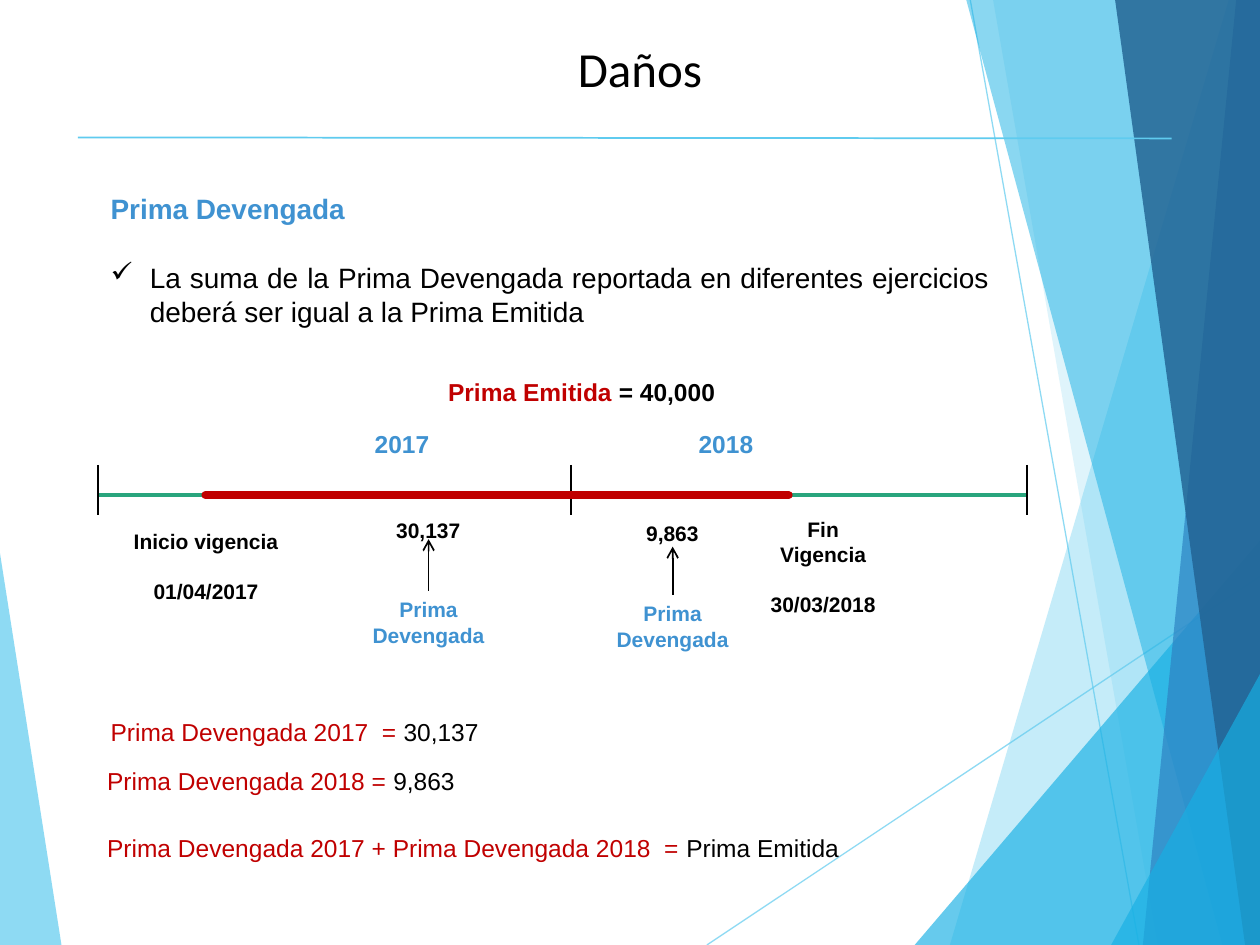
import pptx
import pptx.util
import pptx.dml.color
import pptx.enum.shapes
import pptx.enum.text
import pptx.oxml
import lxml.etree
from pptx.util import Cm, Pt

COLORS = {
    "sky": "5FCBEF", "cyan": "17B0E4", "mid": "2E83C3", "deep": "226292",
    "blue": "3F92D1", "red": "C00000", "green": "29A57D", "black": "000000",
}
ALIGN = pptx.enum.text.PP_ALIGN
W, H = 25.4, 19.05

prs = pptx.Presentation()
prs.slide_width, prs.slide_height = Cm(W), Cm(H)
s = prs.slides.add_slide(prs.slide_layouts[5])
rgb = {k: pptx.dml.color.RGBColor.from_string(v) for k, v in COLORS.items()}
qn = pptx.oxml.ns.qn


def line(x1, y1, x2, y2, color, width, alpha=100):
    """Draw a straight line without shadow; alpha is opacity in percent."""
    c = s.shapes.add_connector(pptx.enum.shapes.MSO_CONNECTOR.STRAIGHT,
                               Cm(x1), Cm(y1), Cm(x2), Cm(y2))
    c.line.color.rgb = rgb[color]
    c.line.width = Pt(width)
    sp_pr = c._element.spPr
    if alpha < 100:
        clr = sp_pr.find(".//" + qn("a:srgbClr"))
        lxml.etree.SubElement(clr, qn("a:alpha"), val=str(alpha * 1000))
    lxml.etree.SubElement(sp_pr, qn("a:effectLst"))
    return c


def text(x, y, w, h, paragraphs, size, bold=False, align=ALIGN.CENTER):
    """Add a text box; each paragraph is a list of (text, color) runs."""
    tf = s.shapes.add_textbox(Cm(x), Cm(y), Cm(w), Cm(h)).text_frame
    tf.word_wrap = True
    for i, runs in enumerate(paragraphs):
        p = tf.add_paragraph() if i else tf.paragraphs[0]
        p.alignment = align
        p.font.name, p.font.size, p.font.bold = "Arial", Pt(size), bold
        for content, color in runs:
            r = p.add_run()
            r.text = content
            r.font.color.rgb = rgb[color]
    return tf


# Background facets
def_right = [(W, H), (W, 0)]
facets = [
    ([(0, 11.15), (1.24, H), (0, H)], "sky", 70),
    ([(24.77, 0), (19.15, H)] + def_right, "sky", 36),
    ([(20.02, 0), (23.34, H)] + def_right, "sky", 20),
    ([(18.44, H), (W, 10.9), (W, H)], "cyan", 66),
    ([(19.48, 0), (24.64, H)] + def_right, "cyan", 50),
    ([(24.92, 0), (23.04, H)] + def_right, "mid", 70),
    ([(22.48, 0), (25.1, H)] + def_right, "deep", 82),
    ([(22.4, H), (W, 13.59), (W, H)], "cyan", 66),
]
line(14.25, H, W, 11.62, "sky", 0.75, 70)
line(19.56, 0, 22.96, H, "sky", 0.75, 70)
for points, color, alpha in facets:
    points = [(Cm(x), Cm(y)) for x, y in points]
    fb = s.shapes.build_freeform(*points[0])
    fb.add_line_segments(points[1:])
    sp = fb.convert_to_shape()
    sp.shadow.inherit = False
    sp.line.fill.background()
    sp.fill.solid()
    sp.fill.fore_color.rgb = rgb[color]
    clr = sp._element.spPr.find(".//" + qn("a:srgbClr"))
    lxml.etree.SubElement(clr, qn("a:alpha"), val=str(alpha * 1000))

# Title
title = s.shapes.title
title.left, title.top, title.width, title.height = Cm(3.58), Cm(0.64), Cm(18.64), Cm(1.45)
tf = title.text_frame
tf.text = "Daños"
tf.auto_size = pptx.enum.text.MSO_AUTO_SIZE.NONE
tf.vertical_anchor = pptx.enum.text.MSO_ANCHOR.MIDDLE
p = tf.paragraphs[0]
p.alignment = ALIGN.CENTER
p.font.name, p.font.size, p.font.color.rgb = "Calibri", Pt(28), rgb["black"]
line(1.57, 2.77, 23.62, 2.79, "sky", 1)

# Heading and rule
text(1.98, 3.73, 17.53, 0.94, [[("Prima Devengada", "blue")]], 16, True, ALIGN.JUSTIFY)
tf = text(1.98, 5.13, 18.21, 1.63,
          [[("La suma de la Prima Devengada reportada en diferentes ejercicios "
             "deberá ser igual a la Prima Emitida", "black")]], 16, align=ALIGN.JUSTIFY)
p_pr = tf.paragraphs[0]._p.get_or_add_pPr()
p_pr.set("marL", str(Cm(0.79)))
p_pr.set("indent", str(-Cm(0.79)))
bullet = lxml.etree.Element(qn("a:buChar"), char="✓")
p_pr.insert(0, bullet)

# Timeline
text(8.31, 7.47, 6.83, 0.86, [[("Prima Emitida ", "red"), ("= 40,000", "black")]], 14, True)
start, end, axis = 1.98, 20.7, 9.98
line(start, axis, end, axis, "green", 2)
for x in (start, 11.51, end):
    line(x, 9.37, x, 10.39, "black", 1)
policy = line(4.14, axis, 15.9, axis, "red", 4.5)
policy.line._get_or_add_ln().set("cap", "rnd")
for x, year in ((6.81, "2017"), (13.34, "2018")):
    text(x, 8.53, 2.59, 0.86, [[(year, "blue")]], 14, True)

for x, y, w, h, labels in (
    (2.21, 10.54, 3.89, 1.8, ["Inicio vigencia", "01/04/2017"]),
    (15.11, 10.29, 2.97, 2.31, ["Fin", "Vigencia", "30/03/2018"]),
):
    tf = text(x, y, w, h, [[(t, "black")] for t in labels], 12, True)
    tf.paragraphs[-1].space_before = Pt(14)

# Earned premium per year: centre, amount top, arrow tip, label top, label width
for x, amount, top, tip, base, width in (
    (8.64, "30,137", 10.31, 10.87, 11.91, 3.28),
    (13.56, "9,863", 10.36, 11.02, 11.99, 3.07),
):
    text(x - 1.3, top, 2.59, 0.76, [[(amount, "black")]], 12, True)
    text(x - width / 2, base, width, 1.27, [[("Prima Devengada", "blue")]], 12, True)
    arrow = line(x, base, x, tip, "black", 1)
    lxml.etree.SubElement(arrow.line._get_or_add_ln(), qn("a:tailEnd"), type="arrow")

# Sums
for x, y, term, value in (
    (1.98, 14.33, "Prima Devengada 2017  = ", "30,137"),
    (1.91, 15.32, "Prima Devengada 2018 = ", "9,863"),
    (1.91, 16.66, "Prima Devengada 2017 + Prima Devengada 2018  = ", "Prima Emitida"),
):
    text(x, y, 18.21, 0.86, [[(term, "red"), (value, "black")]], 14, align=ALIGN.JUSTIFY)

prs.save("out.pptx")
